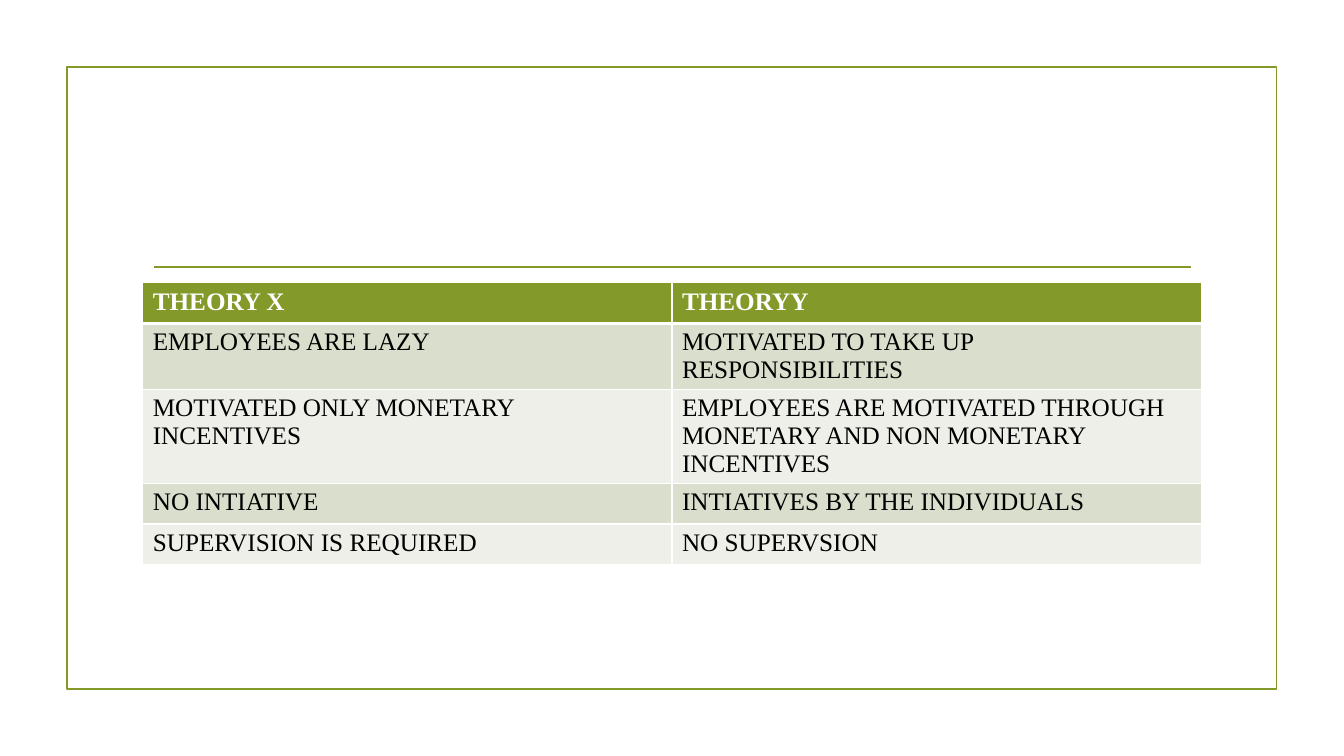
from lxml import etree
from pptx import Presentation
from pptx.dml.color import RGBColor
from pptx.enum.shapes import MSO_CONNECTOR, MSO_SHAPE
from pptx.oxml.ns import qn
from pptx.util import Pt

RECTANGLE = MSO_SHAPE.RECTANGLE
STRAIGHT = MSO_CONNECTOR.STRAIGHT
FONT = "Times New Roman"
GREEN, WHITE, BLACK = "83992A", "FFFFFF", "000000"
BANDS = ("D9DECD", "EDEFE8")
ROW_HEIGHT = 29.2
COLUMN_WIDTH = 378
THEORIES = [
    ("THEORY X", "THEORYY"),
    ("EMPLOYEES ARE LAZY", "MOTIVATED TO TAKE UP RESPONSIBILITIES"),
    ("MOTIVATED ONLY MONETARY INCENTIVES",
     "EMPLOYEES ARE MOTIVATED THROUGH MONETARY AND NON MONETARY INCENTIVES"),
    ("NO INTIATIVE", "INTIATIVES BY THE INDIVIDUALS"),
    ("SUPERVISION IS REQUIRED", "NO SUPERVSION"),
]


def color(hex_string):
    """Return the colour for a hex string."""
    return RGBColor.from_string(hex_string)


def style_line(line):
    """Give a line the green rule style."""
    line.color.rgb = color(GREEN)
    line.width = Pt(1.25)


def add_frame(slide, left, top, width, height):
    """Draw the unfilled border around the slide content."""
    frame = slide.shapes.add_shape(RECTANGLE, Pt(left), Pt(top), Pt(width), Pt(height))
    frame.shadow.inherit = False
    frame.fill.background()
    style_line(frame.line)


def add_rule(slide, left, right, y):
    """Draw the horizontal rule under the title area."""
    rule = slide.shapes.add_connector(STRAIGHT, Pt(left), Pt(y), Pt(right), Pt(y))
    etree.SubElement(rule._element.spPr, qn("a:effectLst"))
    style_line(rule.line)


def set_borders(cell, widths):
    """Give a cell white borders, with widths keyed by side."""
    properties = cell._tc.get_or_add_tcPr()
    for side, width in widths.items():
        border = etree.SubElement(properties, qn(f"a:ln{side}"), w=str(Pt(width)))
        fill = etree.SubElement(border, qn("a:solidFill"))
        etree.SubElement(fill, qn("a:srgbClr"), val=WHITE)


def fill_cell(cell, wording, row):
    """Write and style one cell according to its row."""
    is_header = row == 0
    set_borders(cell, {"L": 1, "R": 1, "T": 3 if row == 1 else 1, "B": 3 if is_header else 1})
    cell.fill.solid()
    cell.fill.fore_color.rgb = color(GREEN if is_header else BANDS[(row - 1) % 2])
    run = cell.text_frame.paragraphs[0].add_run()
    run.text = wording
    run.font.name = FONT
    run.font.size = Pt(18)
    run.font.bold = is_header
    run.font.color.rgb = color(WHITE if is_header else BLACK)


def add_comparison(slide, left, top, rows):
    """Add the table comparing the two theories."""
    columns = len(rows[0])
    table = slide.shapes.add_table(
        len(rows), columns, Pt(left), Pt(top),
        Pt(COLUMN_WIDTH * columns), Pt(ROW_HEIGHT * len(rows))).table
    for row, wordings in enumerate(rows):
        for column, wording in enumerate(wordings):
            fill_cell(table.cell(row, column), wording, row)


def main():
    """Build and save the slide."""
    deck = Presentation()
    deck.slide_width, deck.slide_height = Pt(960), Pt(540)
    slide = deck.slides.add_slide(deck.slide_layouts[6])
    add_frame(slide, 47.8, 48, 864, 444)
    add_rule(slide, 110, 850.5, 190.7)
    add_comparison(slide, 102, 201.8, THEORIES)
    deck.save("out.pptx")


if __name__ == "__main__":
    main()
